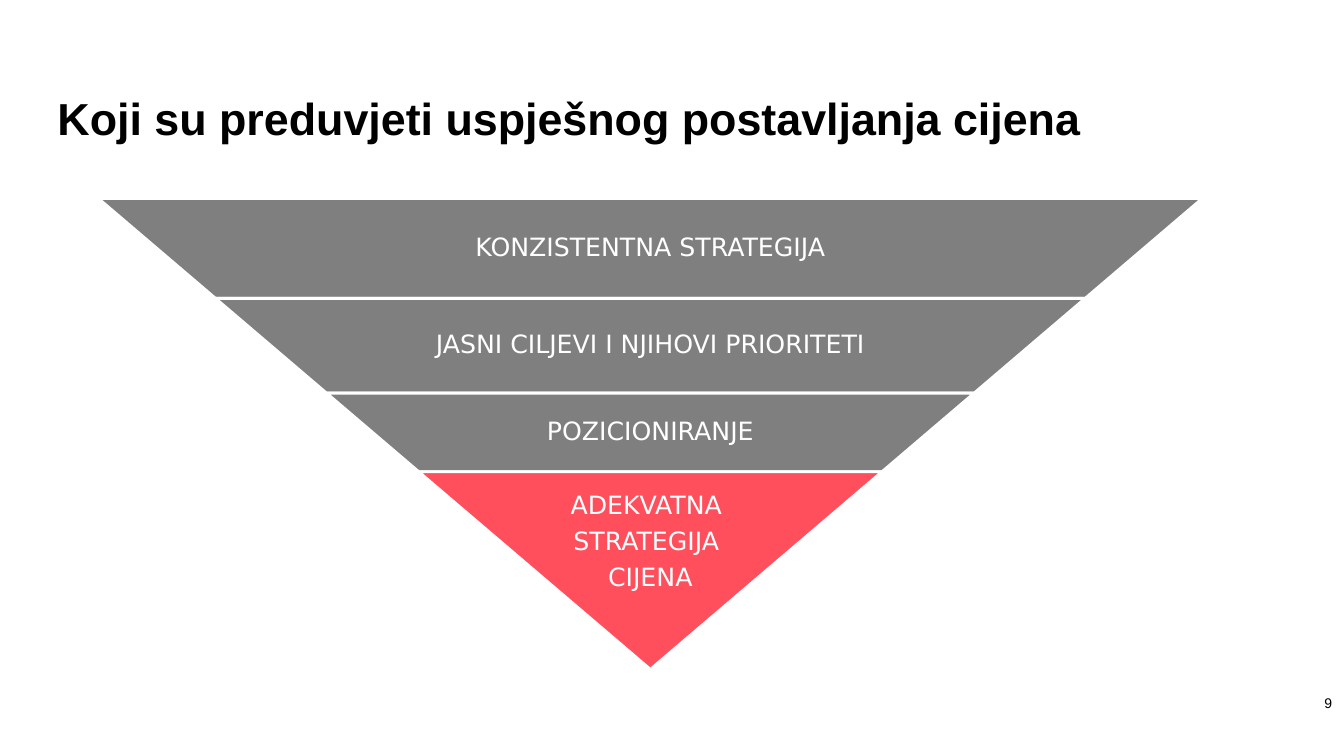
"""Build a slide with an inverted pyramid of the prerequisites for successful pricing."""
from dataclasses import dataclass

from pptx import Presentation
from pptx.dml.color import RGBColor
from pptx.enum.shapes import MSO_SHAPE
from pptx.enum.text import MSO_ANCHOR, PP_ALIGN
from pptx.slide import Slide
from pptx.text.text import TextFrame
from pptx.util import Pt

TRAPEZOID = MSO_SHAPE.TRAPEZOID
TOP, MIDDLE, BOTTOM = MSO_ANCHOR.TOP, MSO_ANCHOR.MIDDLE, MSO_ANCHOR.BOTTOM
LEFT, CENTER, RIGHT = PP_ALIGN.LEFT, PP_ALIGN.CENTER, PP_ALIGN.RIGHT

EMU_PER_PX = 9144
TITLE_ONLY_LAYOUT = 5
PYRAMID_CENTER = 645
PYRAMID_TOP = 197
SLOPE = 1.172
LABEL_SHARE = 0.65


@dataclass(frozen=True)
class Theme:
    """Colours, fonts and type sizes of the slide."""
    ink: RGBColor = RGBColor(0x00, 0x00, 0x00)
    white: RGBColor = RGBColor(0xFF, 0xFF, 0xFF)
    gray: RGBColor = RGBColor(0x7F, 0x7F, 0x7F)
    coral: RGBColor = RGBColor(0xFF, 0x4F, 0x5D)
    heading_font: str = "Arial"
    label_font: str = "DejaVu Sans"
    title_size: int = 32
    label_size: int = 18
    number_size: int = 10
    outline: int = 2


THEME = Theme()


@dataclass(frozen=True)
class Band:
    """One level of the pyramid."""
    lines: tuple[str, ...]
    height: int
    fill: RGBColor = THEME.gray
    label_share: float = LABEL_SHARE
    insets: tuple[int, int, int, int] = (2, 2, 2, 2)


BANDS = (
    Band(("KONZISTENTNA STRATEGIJA",), 99),
    Band(("JASNI CILJEVI I NJIHOVI PRIORITETI",), 94),
    Band(("POZICIONIRANJE",), 78),
    Band(("ADEKVATNA ", "STRATEGIJA ", "CIJENA"), 196, THEME.coral, 1, (2, 0, 2, 55)),
)


def px(length: float) -> int:
    """Turn pixels into EMU."""
    return round(length * EMU_PER_PX)


def write_text(frame: TextFrame, lines: tuple[str, ...], *, font: str, size: int,
               color: RGBColor, bold: bool = False, align: PP_ALIGN = LEFT,
               anchor: MSO_ANCHOR = TOP, line_spacing: float = 0.9,
               space_before: float = 0,
               insets: tuple[int, int, int, int] = (10, 5, 10, 5)) -> None:
    """Fill a text frame with one formatted paragraph per line."""
    frame.word_wrap = True
    frame.vertical_anchor = anchor
    frame.margin_left, frame.margin_top, frame.margin_right, frame.margin_bottom = map(px, insets)
    for index, line in enumerate(lines):
        para = frame.add_paragraph() if index else frame.paragraphs[0]
        para.alignment = align
        para.line_spacing = line_spacing
        para.space_before = Pt(space_before if index else 0)
        span = para.add_run()
        span.text = line
        span.font.name = font
        span.font.size = Pt(size)
        span.font.bold = bold
        span.font.color.rgb = color


def add_title(page: Slide, text: str) -> None:
    """Place and format the title placeholder."""
    title = page.shapes.title
    title.left, title.top, title.width, title.height = map(px, (57, 75, 1221, 74))
    write_text(title.text_frame, (text,), font=THEME.heading_font, size=THEME.title_size,
               color=THEME.ink, bold=True, anchor=BOTTOM, insets=(0, 5, 10, 5))


def add_band(page: Slide, band: Band, top: int, width: float) -> None:
    """Draw one pyramid level and its label."""
    left = PYRAMID_CENTER - width / 2
    shape = page.shapes.add_shape(TRAPEZOID, px(left), px(top), px(width), px(band.height))
    shape.rotation = 180
    shape.adjustments[0] = SLOPE
    shape.shadow.inherit = False
    shape.fill.solid()
    shape.fill.fore_color.rgb = band.fill
    shape.line.color.rgb = THEME.white
    shape.line.width = Pt(THEME.outline)

    label_width = width * band.label_share
    box = page.shapes.add_textbox(px(PYRAMID_CENTER - label_width / 2), px(top),
                                  px(label_width), px(band.height))
    write_text(box.text_frame, band.lines, font=THEME.label_font, size=THEME.label_size,
               color=THEME.white, align=CENTER, anchor=MIDDLE, space_before=6.3,
               insets=band.insets)


def add_pyramid(page: Slide) -> None:
    """Stack the bands, each as wide as the remaining height allows."""
    top = PYRAMID_TOP
    remaining = sum(band.height for band in BANDS)
    for band in BANDS:
        add_band(page, band, top, 2 * SLOPE * remaining)
        top += band.height
        remaining -= band.height


def add_page_number(page: Slide, number: str) -> None:
    """Write the page number in the lower right corner."""
    box = page.shapes.add_textbox(*map(px, (1280, 684, 51, 27)))
    write_text(box.text_frame, (number,), font=THEME.heading_font, size=THEME.number_size,
               color=THEME.ink, align=RIGHT, line_spacing=1.0)


def main() -> None:
    """Create the deck and save it."""
    deck = Presentation()
    deck.slide_width, deck.slide_height = px(1333), px(750)
    page = deck.slides.add_slide(deck.slide_layouts[TITLE_ONLY_LAYOUT])
    add_title(page, "Koji su preduvjeti uspješnog postavljanja cijena")
    add_pyramid(page)
    add_page_number(page, "9")
    deck.save("out.pptx")


if __name__ == "__main__":
    main()
